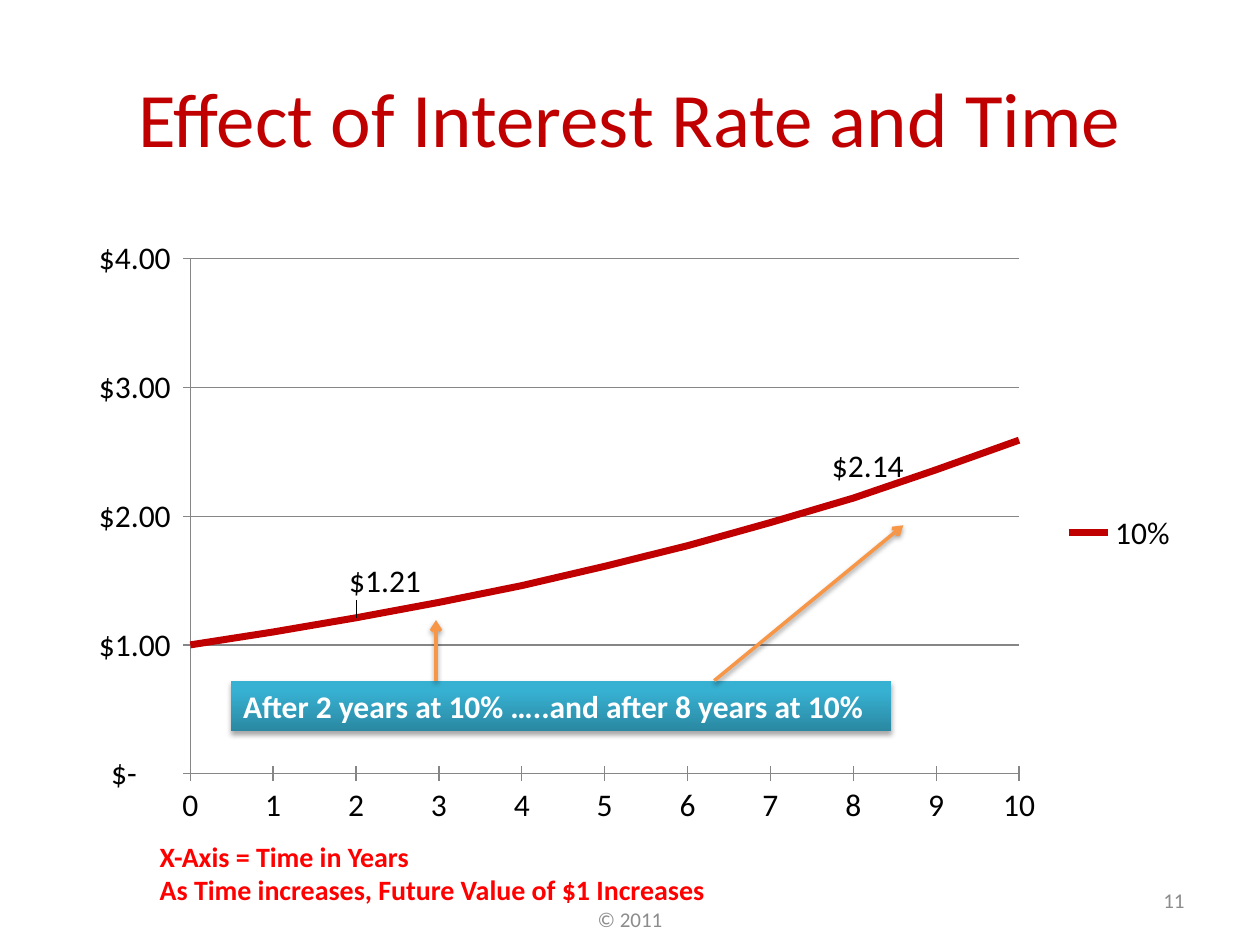
from lxml import etree
from pptx import Presentation
from pptx import util as u
from pptx.chart import data as chart_data
from pptx.dml import color
from pptx.enum import chart as ch, shapes, text
from pptx.oxml import ns, parse_xml

COLORS = {
    "title": "C00000", "curve": "C00000", "note": "FF0000", "footer": "8C8C8C",
    "axis": "868686", "chart_text": "000000", "arrow": "F79646",
    "callout_dark": "2A88A2", "callout_light": "37B1D2", "callout_text": "FFFFFF",
}
FONT = "Calibri"


def rgb(name):
    return color.RGBColor.from_string(COLORS[name])


def write(frame, words, size, tint, align=text.PP_ALIGN.LEFT, bold=False,
          anchor=text.MSO_ANCHOR.TOP):
    frame.text = words
    frame.word_wrap = True
    frame.vertical_anchor = anchor
    for paragraph in frame.paragraphs:
        paragraph.alignment = align
        for run in paragraph.runs:
            run.font.name = FONT
            run.font.size = u.Pt(size)
            run.font.bold = bold
            run.font.color.rgb = rgb(tint)


prs = Presentation()
prs.slide_width, prs.slide_height = u.Cm(25.4), u.Cm(19.05)
slide = prs.slides.add_slide(prs.slide_layouts[6])

# Title, axis note and footers
CENTER, RIGHT, LEFT = text.PP_ALIGN.CENTER, text.PP_ALIGN.RIGHT, text.PP_ALIGN.LEFT
MIDDLE, TOP = text.MSO_ANCHOR.MIDDLE, text.MSO_ANCHOR.TOP
axis_note = "X-Axis = Time in Years\nAs Time increases, Future Value of $1 Increases"
for words, box, size, tint, align, bold, anchor in [
    ("Effect of Interest Rate and Time", (1.27, 0.76, 22.86, 3.18), 44, "title", CENTER, False, MIDDLE),
    (axis_note, (2.97, 16.79, 11.63, 1.63), 16, "note", LEFT, True, TOP),
    ("© 2011", (8.68, 18.03, 8.04, 1.01), 12, "footer", CENTER, False, MIDDLE),
    ("11", (18.2, 17.65, 5.93, 1.01), 12, "footer", RIGHT, False, MIDDLE),
]:
    label = slide.shapes.add_textbox(*map(u.Cm, box))
    write(label.text_frame, words, size, tint, align, bold, anchor)

# Growth of $1 at 10% a year
growth_data = chart_data.XyChartData(number_format='"$"#,##0.00')
growth = growth_data.add_series("10%")
for year in range(11):
    growth.add_data_point(year, round(1.1 ** year, 2))
chart = slide.shapes.add_chart(
    ch.XL_CHART_TYPE.XY_SCATTER_SMOOTH_NO_MARKERS,
    u.Cm(1.42), u.Cm(4.6), u.Cm(22.58), u.Cm(12.29), growth_data).chart
chart.has_title = False
chart.font.name = FONT
chart.font.size = u.Pt(18)
chart.font.color.rgb = rgb("chart_text")
chart.has_legend = True
chart.legend.position = ch.XL_LEGEND_POSITION.RIGHT
chart.legend.include_in_layout = False

years, value = chart.category_axis, chart.value_axis
for axis, top, number_format in [
    (years, 10, "0"),
    (value, 4, '"$"#,##0.00_);"$"#,##0.00_);"$-"??_)'),
]:
    axis.minimum_scale, axis.maximum_scale, axis.major_unit = 0, top, 1
    axis.major_tick_mark = ch.XL_TICK_MARK.CROSS
    axis.minor_tick_mark = ch.XL_TICK_MARK.NONE
    axis.has_major_gridlines = axis is value
    axis.tick_labels.number_format = number_format
    axis.tick_labels.number_format_is_linked = False
    axis.format.line.color.rgb = rgb("axis")
    axis.format.line.width = u.Pt(0.75)
value.major_gridlines.format.line.color.rgb = rgb("axis")
value.major_gridlines.format.line.width = u.Pt(0.75)

curve = chart.plots[0].series[0]
curve.format.line.color.rgb = rgb("curve")
curve.format.line.width = u.Pt(4)
curve.marker.style = ch.XL_MARKER_STYLE.NONE

# Plot area and the two value labels
LAYOUT = '<c:layout %s><c:manualLayout>%s</c:manualLayout></c:layout>'
plot_area = chart.plots[0]._element.getparent()
for old_layout in plot_area.findall(ns.qn("c:layout")):
    plot_area.remove(old_layout)
plot_area.insert(0, parse_xml(LAYOUT % (
    ns.nsdecls("c"),
    '<c:layoutTarget val="inner"/><c:xMode val="edge"/><c:yMode val="edge"/>'
    '<c:x val="0.107"/><c:y val="0.05"/><c:w val="0.74"/><c:h val="0.845"/>')))
for year in (2, 8):
    curve.points[year].data_label.position = ch.XL_LABEL_POSITION.ABOVE
value_labels = curve._element.find(ns.qn("c:dLbls"))
value_labels.find(ns.qn("c:showVal")).set("val", "0")
offsets = [(0.026, -0.02), (0.013, -0.012)]
for value_label, offset in zip(value_labels.findall(ns.qn("c:dLbl")), offsets):
    value_label.find(ns.qn("c:idx")).addnext(parse_xml(LAYOUT % (
        ns.nsdecls("c"), '<c:x val="%s"/><c:y val="%s"/>' % offset)))

# Callout bar
callout = slide.shapes.add_shape(
    shapes.MSO_SHAPE.RECTANGLE, u.Cm(4.65), u.Cm(13.72), u.Cm(13.31), u.Cm(1.02))
callout.fill.gradient()
callout.fill.gradient_angle = 90
dark, light = callout.fill.gradient_stops
dark.color.rgb, dark.position = rgb("callout_dark"), 0
light.color.rgb, light.position = rgb("callout_light"), 0.8
callout.line.fill.background()
callout.shadow.inherit = False
write(callout.text_frame, "After 2 years at 10% …..and after 8 years at 10%",
      18, "callout_text", bold=True)

# Arrows from the callout to the curve
arrows = []
for start_x, end_x, end_y in [(8.79, 8.79, 12.5), (14.4, 18.21, 10.59)]:
    arrow = slide.shapes.add_connector(
        shapes.MSO_CONNECTOR.STRAIGHT, u.Cm(start_x), callout.top, u.Cm(end_x), u.Cm(end_y))
    arrow.line.color.rgb = rgb("arrow")
    arrow.line.width = u.Pt(2)
    etree.SubElement(arrow.line._get_or_add_ln(), ns.qn("a:tailEnd"), type="arrow")
    etree.SubElement(arrow._element.spPr, ns.qn("a:effectLst"))
    arrows.append(arrow)

# Soft shadow below the callout and its arrows
for part, opacity in [(callout, 35), (arrows[0], 38), (arrows[1], 38)]:
    part._element.spPr.find(ns.qn("a:effectLst")).append(parse_xml(
        '<a:outerShdw %s blurRad="%d" dist="%d" dir="5400000" rotWithShape="0">'
        '<a:srgbClr val="000000"><a:alpha val="%d"/></a:srgbClr></a:outerShdw>'
        % (ns.nsdecls("a"), u.Pt(3.1), u.Pt(1.7), opacity * 1000)))

prs.save("out.pptx")
